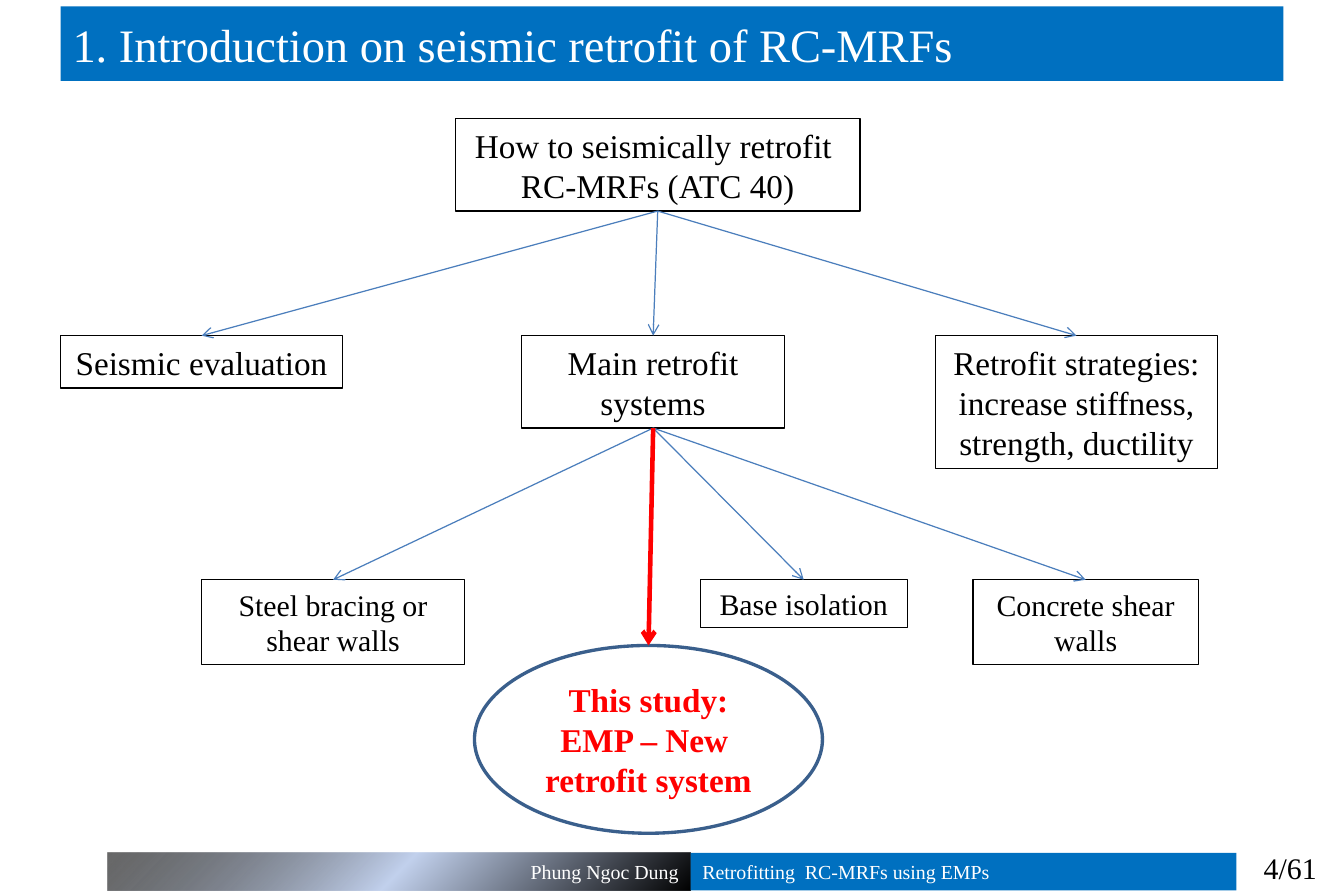
from lxml import etree
from pptx import Presentation, util as u
from pptx.dml.color import RGBColor
from pptx.enum import shapes, text
from pptx.oxml import parse_xml
from pptx.oxml.ns import qn

BLUE = RGBColor(0x00, 0x70, 0xC0)
STEEL = RGBColor(0x4B, 0x7E, 0xBC)
NAVY = RGBColor(0x3A, 0x5F, 0x8C)
RED = RGBColor(0xFF, 0x00, 0x00)
BLACK = RGBColor(0x00, 0x00, 0x00)
WHITE = RGBColor(0xFF, 0xFF, 0xFF)
LEFT, MID, RIGHT = text.PP_ALIGN.LEFT, text.PP_ALIGN.CENTER, text.PP_ALIGN.RIGHT
RECT, OVAL = shapes.MSO_SHAPE.RECTANGLE, shapes.MSO_SHAPE.OVAL
TOP, BOTTOM = 0, 2
GLOW = (
    '<a:gradFill xmlns:a="http://schemas.openxmlformats.org/drawingml/2006/main"'
    ' rotWithShape="1"><a:gsLst>'
    '<a:gs pos="0"><a:srgbClr val="000000"/></a:gs>'
    '<a:gs pos="50000"><a:srgbClr val="C2D1ED"/></a:gs>'
    '<a:gs pos="100000"><a:srgbClr val="000000"><a:alpha val="59000"/></a:srgbClr></a:gs>'
    '</a:gsLst><a:path path="circle"><a:fillToRect l="100000" t="100000"/></a:path>'
    '</a:gradFill>'
)


def write(shape, words, size=20, color=BLACK, align=MID, bold=False,
          anchor=text.MSO_ANCHOR.MIDDLE):
    """Put formatted words in a shape."""
    frame = shape.text_frame
    frame.word_wrap = True
    frame.auto_size = text.MSO_AUTO_SIZE.NONE
    frame.vertical_anchor = anchor
    frame.text = words
    line = frame.paragraphs[0]
    line.alignment = align
    font = line.runs[0].font
    font.name, font.size, font.bold = "Times New Roman", u.Pt(size), bold
    font.color.rgb = color


class Chart:
    """Draw the elements of a flow chart on one slide."""

    def __init__(self, deck):
        self.slide = deck.slides.add_slide(deck.slide_layouts[5])
        self.items = self.slide.shapes

    def title(self, words, x, y, w, h):
        """Format the title bar."""
        bar = self.items.title
        bar.left, bar.top, bar.width, bar.height = map(u.Pt, (x, y, w, h))
        bar.fill.solid()
        bar.fill.fore_color.rgb = BLUE
        write(bar, words, size=28, color=WHITE, align=LEFT)

    def box(self, words, x, y, w, h, kind=RECT, line=BLACK, width=0.75, **style):
        """Add an unfilled box with an outline."""
        box = self.items.add_shape(kind, *map(u.Pt, (x, y, w, h)))
        box.shadow.inherit = False
        box.fill.background()
        box.line.color.rgb = line
        box.line.width = u.Pt(width)
        write(box, words, **style)
        return box

    def band(self, words, x, w, align, glow=False):
        """Add a footer band."""
        band = self.box(words, x, 514.1, w, 22.5, size=12, color=WHITE, align=align)
        band.line.fill.background()
        if glow:
            props = band.element.spPr
            props.replace(props.find(qn("a:noFill")), parse_xml(GLOW))
        else:
            band.fill.solid()
            band.fill.fore_color.rgb = BLUE

    def label(self, words, x, y, w, h, **style):
        """Add plain text."""
        write(self.items.add_textbox(*map(u.Pt, (x, y, w, h))), words, **style)

    def arrow(self, start, end, color=STEEL, width=0.75):
        """Join the bottom of one box to the top of the next."""
        arrow = self.items.add_connector(shapes.MSO_CONNECTOR.STRAIGHT, 0, 0, 0, 0)
        arrow.begin_connect(start, BOTTOM)
        arrow.end_connect(end, TOP)
        arrow.line.color.rgb = color
        arrow.line.width = u.Pt(width)
        props = arrow.element.spPr
        etree.SubElement(props.find(qn("a:ln")), qn("a:tailEnd"), type="arrow")
        etree.SubElement(props, qn("a:effectLst"))


def main():
    """Build and save the slide."""
    deck = Presentation()
    deck.slide_width, deck.slide_height = u.Pt(810), u.Pt(540)
    chart = Chart(deck)
    chart.band("Phung Ngoc Dung", 64.6, 351.6, RIGHT, glow=True)
    chart.band("Retrofitting  RC-MRFs using EMPs", 416.2, 329, LEFT)
    chart.label("4/61", 745.2, 508.5, 64.8, 29, size=18, anchor=text.MSO_ANCHOR.TOP)
    chart.title("1. Introduction on seismic retrofit of RC-MRFs", 36.5, 3.8, 737, 45)

    root = chart.box("How to seismically retrofit  RC-MRFs (ATC 40)", 274.4, 71.5, 244, 55.7)
    row = 202.3
    check = chart.box("Seismic evaluation", 36.5, row, 170, 31.5)
    hub = chart.box("Main retrofit systems", 314.4, row, 158.5, 55.7)
    plans = chart.box("Retrofit strategies: increase stiffness, strength, ductility",
                      563.8, row, 170, 79.9)
    row = 349.4
    steel = chart.box("Steel bracing or shear walls", 121.5, row, 158.5, 51, size=18)
    base = chart.box("Base isolation", 422, row, 124.8, 29, size=18)
    walls = chart.box("Concrete shear walls", 586.4, row, 135.8, 51, size=18)
    study = chart.box("This study: EMP – New  retrofit system", 286, 389, 209.7, 113.2,
                      kind=OVAL, line=NAVY, width=2, color=RED, bold=True)

    for end in (check, hub, plans):
        chart.arrow(root, end)
    for end in (steel, base, walls):
        chart.arrow(hub, end)
    chart.arrow(hub, study, color=RED, width=2.75)
    deck.save("out.pptx")


if __name__ == "__main__":
    main()
